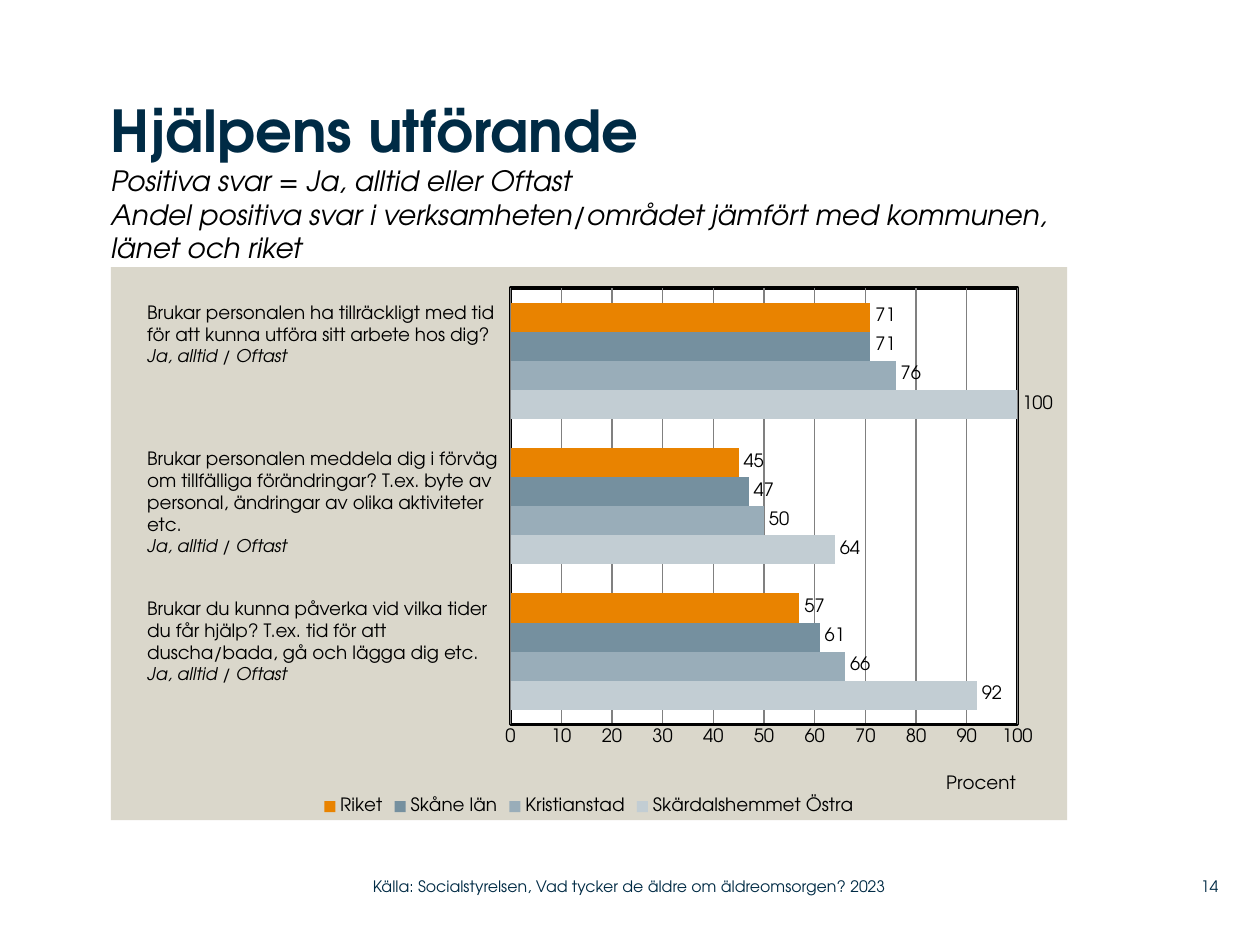
from lxml.etree import fromstring
from pptx import Presentation
from pptx.chart.data import CategoryChartData
from pptx.dml.color import RGBColor
from pptx.enum.chart import XL_CHART_TYPE as ChartType, XL_LABEL_POSITION as LabelPos
from pptx.enum.chart import XL_LEGEND_POSITION as LegendPos, XL_TICK_MARK as Tick
from pptx.enum.text import MSO_ANCHOR as Anchor, PP_ALIGN as Align
from pptx.oxml.ns import nsdecls, qn
from pptx.util import Inches, Pt

FONT = "TeX Gyre Adventor"
NAVY = RGBColor(0x00, 0x2B, 0x45)
BLACK = RGBColor(0x00, 0x00, 0x00)
GREY = RGBColor(0x80, 0x80, 0x80)
SAND = RGBColor(0xDA, 0xD7, 0xCB)
WHITE = RGBColor(0xFF, 0xFF, 0xFF)

# Content
HEADING = "Hjälpens utförande"
SUBHEADING = [
    "Positiva svar = Ja, alltid eller Oftast",
    "Andel positiva svar i verksamheten/området jämfört med kommunen, länet och riket",
]
POSITIVE = "Ja, alltid / Oftast"
QUESTIONS = [  # top, height, lines
    (2.34, 0.81, ["Brukar personalen ha tillräckligt med tid",
                  "för att kunna utföra sitt arbete hos dig?"]),
    (3.5, 0.98, ["Brukar personalen meddela dig i förväg om tillfälliga förändringar? "
                 "T.ex. byte av personal, ändringar av olika aktiviteter etc."]),
    (4.69, 0.81, ["Brukar du kunna påverka vid vilka tider",
                  "du får hjälp? T.ex. tid för att",
                  "duscha/bada, gå och lägga dig etc."]),
]
RESULTS = [  # unit, answers from the bottom group up, colour
    ("Skärdalshemmet Östra", (92, 64, 100), RGBColor(0xC2, 0xCD, 0xD3)),
    ("Kristianstad", (66, 50, 76), RGBColor(0x99, 0xAD, 0xB9)),
    ("Skåne län", (61, 47, 71), RGBColor(0x75, 0x90, 0x9F)),
    ("Riket", (57, 45, 71), RGBColor(0xE9, 0x83, 0x00)),
]
SOURCE = "Källa: Socialstyrelsen, Vad tycker de äldre om äldreomsorgen? 2023"
PAGE = "14"


def style(font, size, color=BLACK, bold=False, italic=False):
    font.name, font.size, font.bold, font.italic = FONT, Pt(size), bold, italic
    font.color.rgb = color


def add_text(paragraph, text, **fmt):
    run = paragraph.add_run()
    run.text = text
    style(run.font, **fmt)


def add_box(slide, box, lines, align=Align.LEFT, anchor=Anchor.TOP, inset=None):
    """Text box with one paragraph for each (text, format) pair."""
    frame = slide.shapes.add_textbox(*map(Inches, box)).text_frame
    frame.word_wrap, frame.vertical_anchor = True, anchor
    if inset is not None:
        no_margins(frame)
    for number, (text, fmt) in enumerate(lines):
        paragraph = frame.add_paragraph() if number else frame.paragraphs[0]
        paragraph.alignment = align
        add_text(paragraph, text, **fmt)


def no_margins(frame):
    frame.margin_left = frame.margin_right = frame.margin_top = frame.margin_bottom = 0


def area_format(fill, line=None):
    edge = (f'<a:ln w="{Pt(2)}"><a:solidFill><a:srgbClr val="{line}"/></a:solidFill></a:ln>'
            if line is not None else "<a:ln><a:noFill/></a:ln>")
    return fromstring(f'<c:spPr {nsdecls("c", "a")}><a:solidFill><a:srgbClr val="{fill}"/>'
                      f'</a:solidFill>{edge}</c:spPr>')


def manual_layout(parent, inner=False, **shares):
    """Layout element given as shares of the chart's size."""
    for old in parent.findall(qn("c:layout")):
        parent.remove(old)
    target = '<c:layoutTarget val="inner"/>' if inner else ""
    modes = "".join(f'<c:{side}Mode val="edge"/>' for side in "xy")
    values = "".join(f'<c:{key} val="{share}"/>' for key, share in shares.items())
    return fromstring(f'<c:layout {nsdecls("c")}><c:manualLayout>{target}{modes}{values}'
                      '</c:manualLayout></c:layout>')


def add_results_chart(slide):
    data = CategoryChartData()
    data.categories = ["1", "2", "3"]
    for unit, answers, _ in RESULTS:
        data.add_series(unit, answers)
    chart = slide.shapes.add_chart(ChartType.BAR_CLUSTERED, Inches(0.88), Inches(2.12),
                                   Inches(7.59), Inches(4.39), data).chart
    style(chart.font, 10.5)
    chart.has_title = False
    chart.has_legend = True
    chart.legend.position = LegendPos.BOTTOM
    chart.legend.include_in_layout = False
    style(chart.legend.font, 10.5)

    # Bars and their values
    plot = chart.plots[0]
    plot.gap_width, plot.overlap, plot.vary_by_categories = 100, 0, False
    for series, (_, _, color) in zip(plot.series, RESULTS):
        series.format.fill.solid()
        series.format.fill.fore_color.rgb = color
        labels = series.data_labels
        labels.show_value, labels.position = True, LabelPos.OUTSIDE_END
        style(labels.font, 10.5)

    # Axes
    chart.category_axis.visible = False
    percent = chart.value_axis
    percent.minimum_scale, percent.maximum_scale, percent.major_unit = 0, 100, 10
    percent.major_tick_mark = percent.minor_tick_mark = Tick.NONE
    percent.format.line.color.rgb = BLACK
    percent.format.line.width = Pt(2)
    percent.has_major_gridlines = True
    percent.major_gridlines.format.line.color.rgb = GREY
    percent.major_gridlines.format.line.width = Pt(0.75)
    style(percent.tick_labels.font, 10.5)
    add_text(percent.axis_title.text_frame.paragraphs[0], "Procent", size=10.5)
    title = percent.axis_title._element
    title.find(qn("c:tx")).addnext(manual_layout(title, x=0.87, y=0.91))

    # Backgrounds and plot position
    space = chart._chartSpace
    space.find(qn("c:txPr")).addprevious(area_format(SAND))
    area = space.chart.plotArea
    area.insert(0, manual_layout(area, inner=True, x=0.418, y=0.038, w=0.53, h=0.789))
    area.append(area_format(WHITE, BLACK))


def main():
    prs = Presentation()
    prs.slide_width, prs.slide_height = Inches(10), Inches(7.5)
    slide = prs.slides.add_slide(prs.slide_layouts[5])

    # Heading
    title = slide.shapes.title
    title.left, title.top, title.width, title.height = map(Inches, (0.88, 0.75, 7.79, 1.21))
    frame = title.text_frame
    no_margins(frame)
    frame.word_wrap, frame.vertical_anchor = True, Anchor.TOP
    paragraph = frame.paragraphs[0]
    paragraph.alignment = Align.LEFT
    add_text(paragraph, HEADING, size=33, color=NAVY, bold=True)
    for line in SUBHEADING:
        paragraph.add_line_break()
        add_text(paragraph, line, size=16, italic=True)

    add_results_chart(slide)

    # Questions beside the bar groups
    for top, height, lines in QUESTIONS:
        texts = [(line, {"size": 10.5}) for line in lines]
        add_box(slide, (1.07, top, 2.98, height),
                texts + [(POSITIVE, {"size": 10, "italic": True})])

    # Footer
    small = {"size": 9, "color": NAVY}
    add_box(slide, (2.96, 6.89, 4.43, 0.29), [(SOURCE, small)], anchor=Anchor.MIDDLE, inset=0)
    add_box(slide, (9.2, 6.89, 0.47, 0.29), [(PAGE, small)], Align.RIGHT, Anchor.MIDDLE, inset=0)

    prs.save("out.pptx")


if __name__ == "__main__":
    main()
